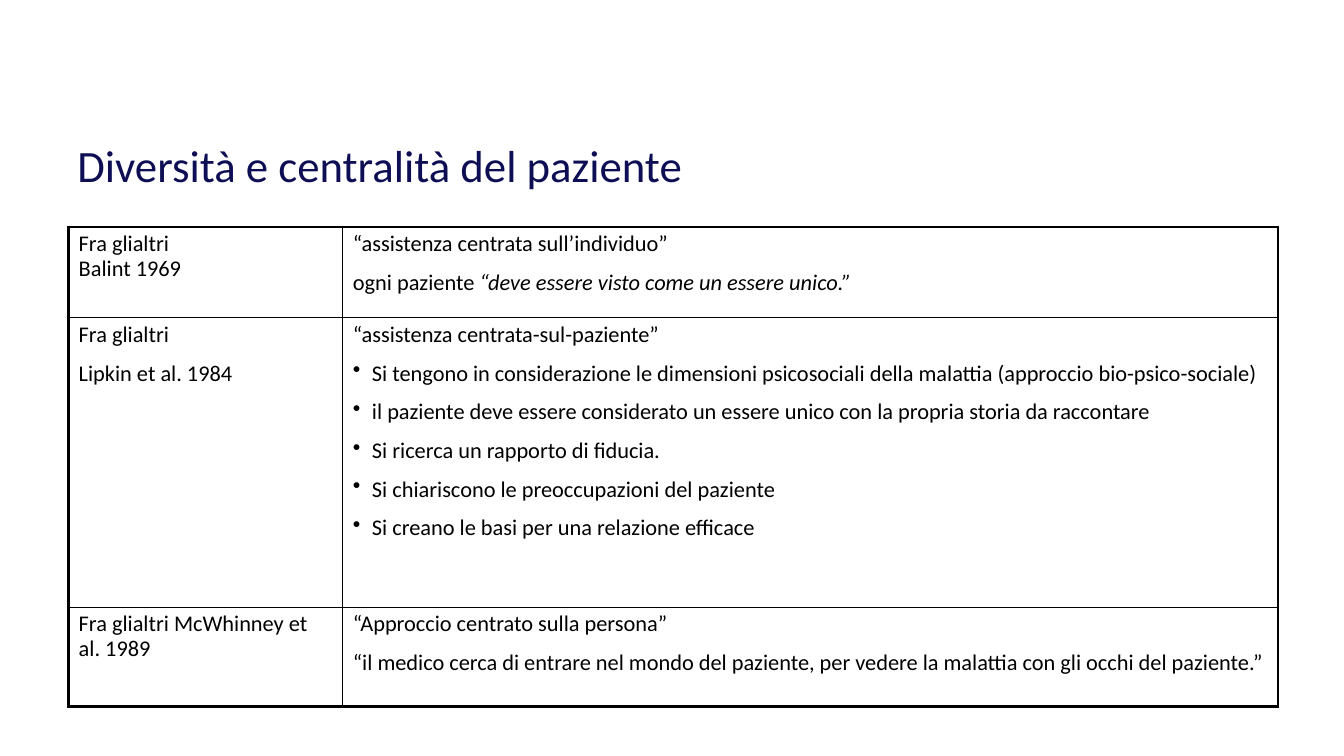
from copy import deepcopy
from dataclasses import dataclass
from typing import Any

from pptx import Presentation as Deck
from pptx.dml.color import RGBColor
from pptx.enum.text import MSO_ANCHOR as Anchor
from pptx.oxml import parse_xml as to_xml
from pptx.oxml.ns import nsdecls as names, qn
from pptx.util import Cm, Pt

NAVY = RGBColor(0x0D, 0x0E, 0x53)
BLACK = RGBColor(0, 0, 0)
THICK, THIN = Pt(2.25), Pt(1)
INDENT = Cm(0.48)
COLS = (6.91, 23.57)
ROWS = (2.29, 7.29, 2.51)
FONT = {"name": "Calibri", "size": Pt(16), "italic": False}
HEAD = {"name": "Calibri", "size": Pt(32)}
PARA = {"line_spacing": 0.9, "space_before": Pt(10)}


@dataclass
class Line:
    text: str
    quote: str = ""
    hang: bool = False
    dot: bool = False


def point(text: str) -> Line:
    return Line(text, hang=True, dot=True)


CELLS = (
    (
        (Line("Fra glialtri\vBalint 1969"),),
        (
            Line("“assistenza centrata sull’individuo”"),
            Line("ogni paziente ", "“deve essere visto come un essere unico.”"),
        ),
    ),
    (
        (Line("Fra glialtri"), Line("Lipkin et al. 1984")),
        (
            Line("“assistenza centrata-sul-paziente”", hang=True),
            point("Si tengono in considerazione le dimensioni psicosociali "
                  "della malattia (approccio bio-psico-sociale)"),
            point("il paziente deve essere considerato un essere unico "
                  "con la propria storia da raccontare"),
            point("Si ricerca un rapporto di fiducia."),
            point("Si chiariscono le preoccupazioni del paziente"),
            point("Si creano le basi per una relazione efficace"),
        ),
    ),
    (
        (Line("Fra glialtri McWhinney et al. 1989"),),
        (
            Line("“Approccio centrato sulla persona”"),
            Line("“il medico cerca di entrare nel mondo del paziente, per "
                 "vedere la malattia con gli occhi del paziente.”"),
        ),
    ),
)


def style(item: Any, form: dict[str, Any]) -> None:
    for key, value in form.items():
        setattr(item, key, value)


def write(para: Any, line: Line) -> None:
    para.text = line.text
    if line.quote:
        para.add_run().text = line.quote
    style(para, PARA)
    for run in para.runs:
        style(run.font, FONT | {"italic": run.text == line.quote})
        run.font.color.rgb = BLACK
    for gap in para._p.findall(qn("a:br")):
        gap.append(deepcopy(para.runs[0]._r.rPr))
    if line.hang:
        props = para._p.get_or_add_pPr()
        props.set("marL", str(INDENT))
        props.set("indent", str(-INDENT if line.dot else -INDENT))
        mark = '<a:buChar {} char="•"/>' if line.dot else "<a:buNone {}/>"
        props.append(to_xml(mark.format(names("a"))))


def edge(cell: Any, row: int, col: int) -> None:
    outer = {"L": col == 0, "R": col == len(COLS) - 1,
             "T": row == 0, "B": row == len(ROWS) - 1}
    props = cell._tc.get_or_add_tcPr()
    for spot, (side, bold) in enumerate(outer.items()):
        props.insert(spot, to_xml(
            f'<a:ln{side} {names("a")} w="{THICK if bold else THIN}">'
            f'<a:solidFill><a:srgbClr val="{BLACK}"/></a:solidFill>'
            f'</a:ln{side}>'))


def fill(cell: Any, lines: tuple[Line, ...]) -> None:
    cell.fill.background()
    frame = cell.text_frame
    for spot, line in enumerate(lines):
        write(frame.add_paragraph() if spot else frame.paragraphs[0], line)


def title(slide: Any) -> None:
    box = slide.shapes.add_textbox(Cm(1.7), Cm(3.53), Cm(30.48), Cm(1.4))
    frame = box.text_frame
    style(frame, {"word_wrap": True, "vertical_anchor": Anchor.MIDDLE})
    para = frame.paragraphs[0]
    para.text = "Diversità e centralità del paziente"
    para.line_spacing = 0.9
    font = para.runs[0].font
    style(font, HEAD)
    font.color.rgb = NAVY


def grid(slide: Any) -> None:
    table = slide.shapes.add_table(
        len(ROWS), len(COLS), Cm(1.73), Cm(5.72),
        Cm(sum(COLS)), Cm(sum(ROWS))).table
    style(table, {"first_row": False, "horz_banding": False})
    for col, width in zip(table.columns, COLS):
        col.width = Cm(width)
    for row, height in zip(table.rows, ROWS):
        row.height = Cm(height)
    for row, parts in enumerate(CELLS):
        for col, lines in enumerate(parts):
            cell = table.cell(row, col)
            fill(cell, lines)
            edge(cell, row, col)


def main() -> None:
    deck = Deck()
    style(deck, {"slide_width": Cm(33.87), "slide_height": Cm(19.05)})
    slide = deck.slides.add_slide(deck.slide_layouts[6])
    title(slide)
    grid(slide)
    deck.save("out.pptx")


if __name__ == "__main__":
    main()
